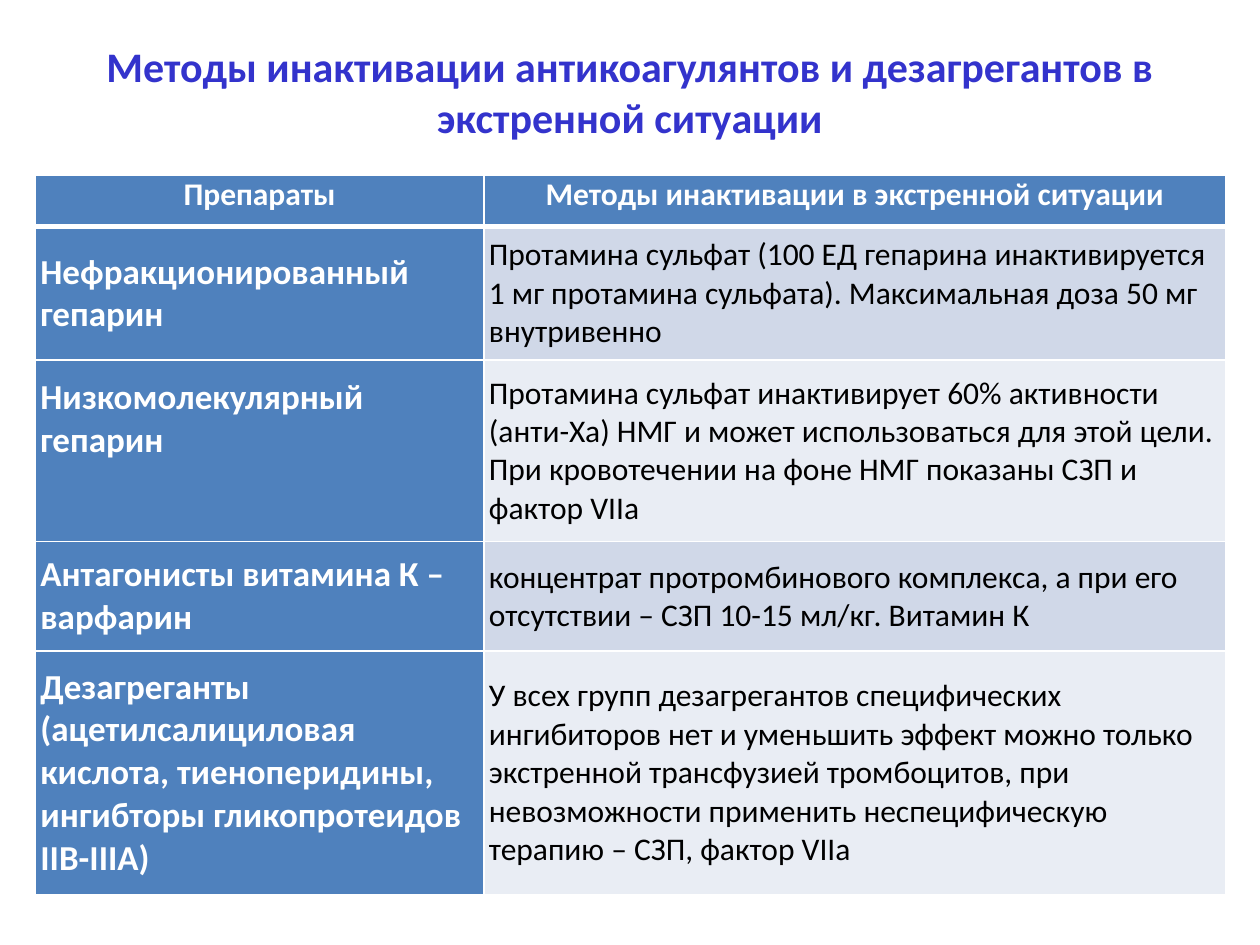
from lxml.etree import SubElement
from pptx import Presentation
from pptx.dml.color import RGBColor
from pptx.enum.text import MSO_ANCHOR, PP_ALIGN
from pptx.oxml.ns import qn
from pptx.util import Pt

TITLE = "Методы инактивации антикоагулянтов и дезагрегантов в экстренной ситуации"
HEADERS = ("Препараты", "Методы инактивации в экстренной ситуации")
TREATMENTS = [
    ("Нефракционированный гепарин",
     "Протамина сульфат (100 ЕД гепарина инактивируется 1 мг протамина "
     "сульфата). Максимальная доза 50 мг внутривенно"),
    ("Низкомолекулярный гепарин",
     "Протамина сульфат инактивирует 60% активности (анти-Ха) НМГ и может "
     "использоваться для этой цели. При кровотечении на фоне НМГ показаны "
     "СЗП и фактор VIIa"),
    ("Антагонисты витамина К – варфарин",
     "концентрат протромбинового комплекса, а при его отсутствии – "
     "СЗП 10-15 мл/кг. Витамин К"),
    ("Дезагреганты (ацетилсалициловая кислота, тиеноперидины, "
     "ингибторы гликопротеидов IIB-IIIA)",
     "У всех групп дезагрегантов специфических ингибиторов нет и уменьшить "
     "эффект можно только экстренной трансфузией тромбоцитов, при "
     "невозможности применить неспецифическую терапию – СЗП, фактор VIIa"),
]
COLUMN_WIDTHS = (256.3, 424.1)
ROW_HEIGHTS = (29.5, 76.3, 103.7, 62.6, 139)
TABLE_LEFT, TABLE_TOP = 20.2, 100.1
BLUE, WHITE, BLACK, TITLE_BLUE = "4F81BD", "FFFFFF", "000000", "3333CC"
BANDS = ("D0D8E8", "E9EDF4")
RAISED_ROW, RAISED_INSET = 2, 36


def color(value):
    return RGBColor.from_string(value)


def write(frame, text, size=18, ink=WHITE, bold=True, align=PP_ALIGN.LEFT):
    paragraph = frame.paragraphs[0]
    paragraph.alignment = align
    run = paragraph.add_run()
    run.text = text
    run.font.name = "Calibri"
    run.font.size = Pt(size)
    run.font.bold = bold
    run.font.color.rgb = color(ink)


def add_borders(cell, top, bottom):
    properties = cell._tc.get_or_add_tcPr()
    for side, width in (("L", 1), ("R", 1), ("T", top), ("B", bottom)):
        line = SubElement(properties, qn(f"a:ln{side}"), w=str(Pt(width)))
        fill = SubElement(line, qn("a:solidFill"))
        SubElement(fill, qn("a:srgbClr"), val=WHITE)


def fill_cell(cell, row, column, text):
    header = row == 0
    add_borders(cell, 3 if row == 1 else 1, 3 if header else 1)
    cell.margin_left = cell.margin_right = Pt(2.9)
    cell.margin_top = cell.margin_bottom = 0
    cell.vertical_anchor = MSO_ANCHOR.TOP if header else MSO_ANCHOR.MIDDLE
    cell.fill.solid()
    if header:
        cell.fill.fore_color.rgb = color(BLUE)
        write(cell.text_frame, text, align=PP_ALIGN.CENTER)
    elif column == 0:
        cell.fill.fore_color.rgb = color(BLUE)
        write(cell.text_frame, text, size=20)
        if row == RAISED_ROW:
            cell.margin_bottom = Pt(RAISED_INSET)
    else:
        cell.fill.fore_color.rgb = color(BANDS[(row - 1) % 2])
        write(cell.text_frame, text, ink=BLACK, bold=False)


def main():
    deck = Presentation()
    deck.slide_width, deck.slide_height = Pt(720), Pt(540)
    slide = deck.slides.add_slide(deck.slide_layouts[5])

    title = slide.shapes.title
    title.left, title.top = Pt(36), Pt(21.6)
    title.width, title.height = Pt(648), Pt(90)
    title.text_frame.vertical_anchor = MSO_ANCHOR.MIDDLE
    title.text_frame.margin_bottom = Pt(32.4)
    write(title.text_frame, TITLE, size=24, ink=TITLE_BLUE, align=PP_ALIGN.CENTER)

    rows = [HEADERS, *TREATMENTS]
    table = slide.shapes.add_table(
        len(rows), len(HEADERS), Pt(TABLE_LEFT), Pt(TABLE_TOP),
        Pt(sum(COLUMN_WIDTHS)), Pt(sum(ROW_HEIGHTS))).table
    for column, width in zip(table.columns, COLUMN_WIDTHS):
        column.width = Pt(width)
    for row, height in zip(table.rows, ROW_HEIGHTS):
        row.height = Pt(height)
    for row, texts in enumerate(rows):
        for column, text in enumerate(texts):
            fill_cell(table.cell(row, column), row, column, text)

    deck.save("out.pptx")


if __name__ == "__main__":
    main()
